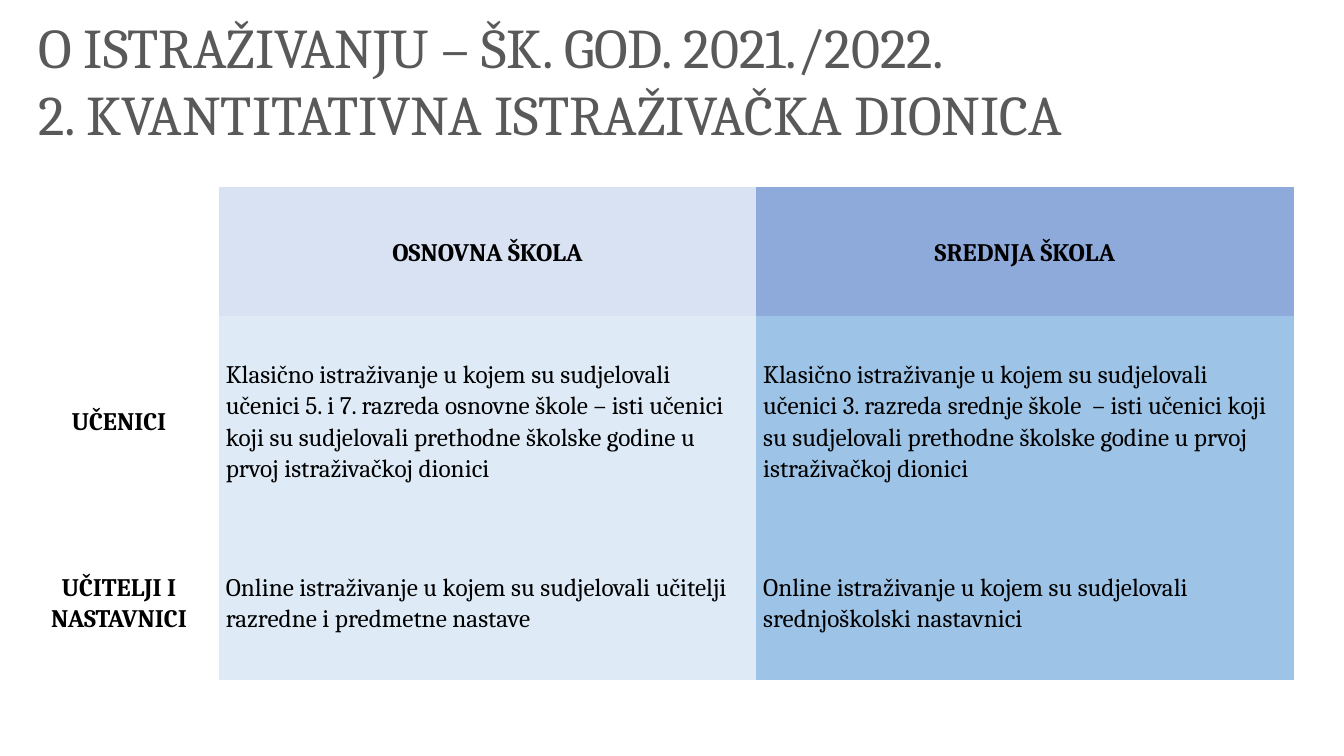
from pptx import Presentation
from pptx.dml.color import RGBColor
from pptx.enum.text import MSO_ANCHOR as Anchor, MSO_AUTO_SIZE as AutoSize, PP_ALIGN as Align
from pptx.util import Inches, Pt

TITLE = ["O ISTRAŽIVANJU – ŠK. GOD. 2021./2022.", "2. KVANTITATIVNA ISTRAŽIVAČKA DIONICA"]
SCHOOLS = ["OSNOVNA ŠKOLA", "SREDNJA ŠKOLA"]
GROUPS = {
    "UČENICI": [
        "Klasično istraživanje u kojem su sudjelovali učenici 5. i 7. razreda osnovne škole – isti učenici "
        "koji su sudjelovali prethodne školske godine u prvoj istraživačkoj dionici",
        "Klasično istraživanje u kojem su sudjelovali učenici 3. razreda srednje škole  – isti učenici "
        "koji su sudjelovali prethodne školske godine u prvoj istraživačkoj dionici",
    ],
    "UČITELJI I NASTAVNICI": [
        "Online istraživanje u kojem su sudjelovali učitelji razredne i predmetne nastave",
        "Online istraživanje u kojem su sudjelovali srednjoškolski nastavnici",
    ],
}
HEADER_FILLS = ["D9E2F3", "8EAADB"]
BODY_FILLS = ["DEEBF7", "9DC3E6"]
COLUMNS = [1.98, 5.33, 5.33]
ROWS = [0.6, 0.68, 2.08, 1.53, 0.51]
HEADER_ROWS = 2
PLAIN_STYLE = "{2D5ABB26-0587-4C30-8999-92F81FD0307C}"

HEADING = {"size": Pt(18), "bold": True}
BODY = {"size": Pt(18), "bold": False}
CENTERED = {"alignment": Align.CENTER, "line_spacing": 1.07}
LEFT = {"alignment": Align.LEFT, "line_spacing": 1.07, "space_after": Pt(4)}
CELL = {"vertical_anchor": Anchor.MIDDLE, "margin_left": Inches(0.07), "margin_right": Inches(0.07),
        "margin_top": 0, "margin_bottom": 0}


def apply(target, values):
    """Set every attribute in a dict of format values."""
    for name, value in values.items():
        setattr(target, name, value)


def color(value):
    """Turn a hex string into a colour."""
    return RGBColor.from_string(value)


def write(paragraph, text, font, layout, ink="000000"):
    """Put one formatted run into a paragraph."""
    apply(paragraph, layout)
    run = paragraph.add_run()
    run.text = text
    apply(run.font, {"name": "Cambria", **font})
    run.font.color.rgb = color(ink)


def fill_cell(cell, text, font, layout, fill=None):
    """Write a table cell and colour it when a fill is given."""
    apply(cell, CELL)
    write(cell.text_frame.paragraphs[0], text, font, layout)
    if fill:
        cell.fill.solid()
        cell.fill.fore_color.rgb = color(fill)


def add_title(slide):
    """Add the two-line title."""
    frame = slide.shapes.add_textbox(*map(Inches, (0.28, 0.07, 12.16, 1.45))).text_frame
    apply(frame, {"word_wrap": True, "auto_size": AutoSize.SHAPE_TO_FIT_TEXT})
    for index, line in enumerate(TITLE):
        paragraph = frame.add_paragraph() if index else frame.paragraphs[0]
        write(paragraph, line, {"size": Pt(40)}, {}, "595959")


def add_research_table(slide):
    """Add the table of schools by participant group."""
    frame = slide.shapes.add_table(len(ROWS), len(COLUMNS), Inches(0.19), Inches(1.86),
                                   Inches(sum(COLUMNS)), Inches(sum(ROWS)))
    table = frame.table
    apply(table, {"first_row": False, "horz_banding": False})
    table._tbl.tblPr.find("{*}tableStyleId").text = PLAIN_STYLE
    for column, width in zip(table.columns, COLUMNS):
        column.width = Inches(width)
    for row, height in zip(table.rows, ROWS):
        row.height = Inches(height)

    for column, (school, fill) in enumerate(zip(SCHOOLS, HEADER_FILLS), 1):
        cell = table.cell(0, column)
        cell.merge(table.cell(HEADER_ROWS - 1, column))
        fill_cell(cell, school, HEADING, CENTERED, fill)
    for row, (group, descriptions) in enumerate(GROUPS.items(), HEADER_ROWS):
        fill_cell(table.cell(row, 0), group, HEADING, CENTERED)
        for column, (text, fill) in enumerate(zip(descriptions, BODY_FILLS), 1):
            fill_cell(table.cell(row, column), text, BODY, LEFT, fill)
    last = len(ROWS) - 1
    table.cell(last, 1).merge(table.cell(last, len(COLUMNS) - 1))


def main():
    """Build and save the slide."""
    presentation = Presentation()
    apply(presentation, {"slide_width": Inches(13.33), "slide_height": Inches(7.5)})
    slide = presentation.slides.add_slide(presentation.slide_layouts[6])
    add_title(slide)
    add_research_table(slide)
    presentation.save("out.pptx")


if __name__ == "__main__":
    main()
